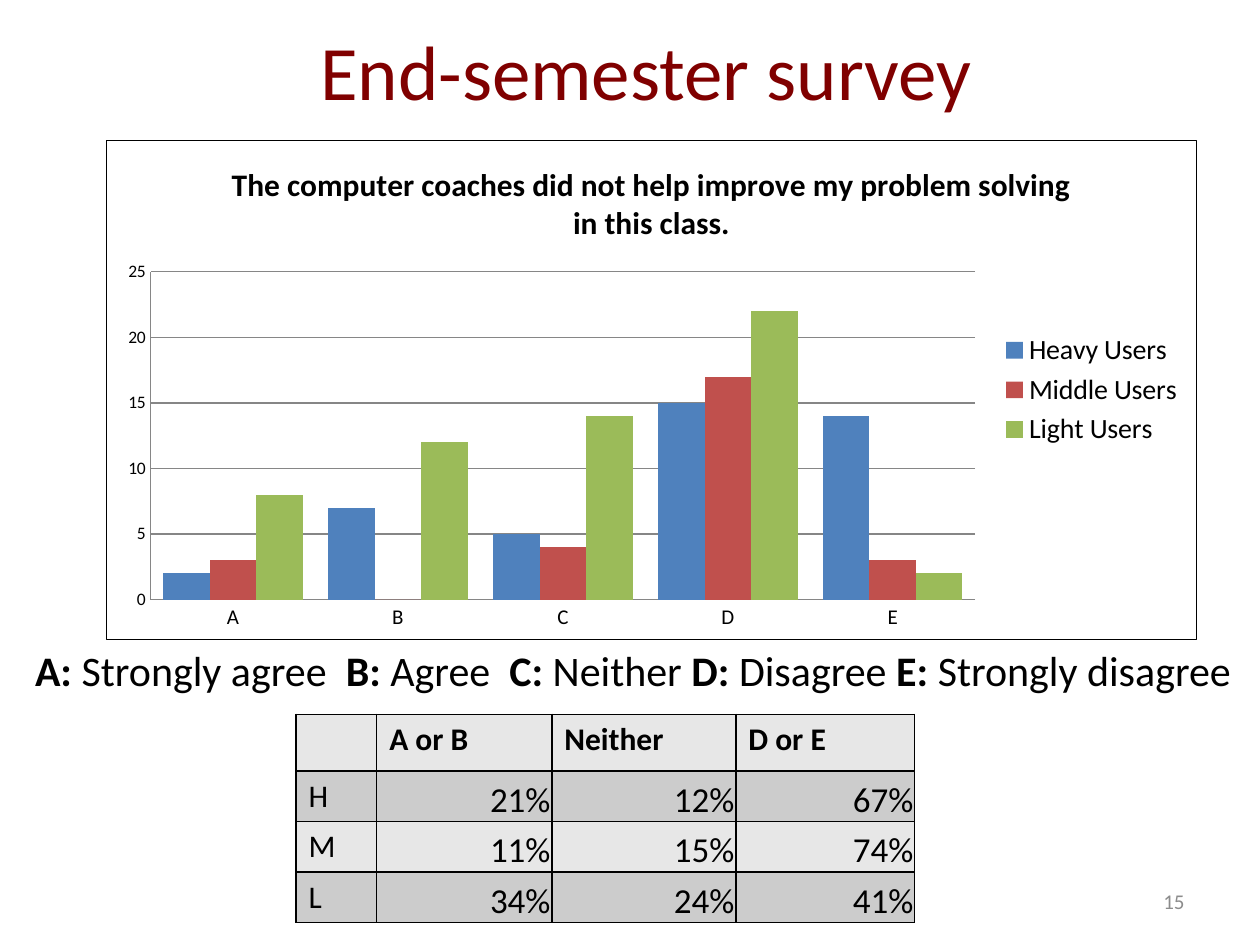
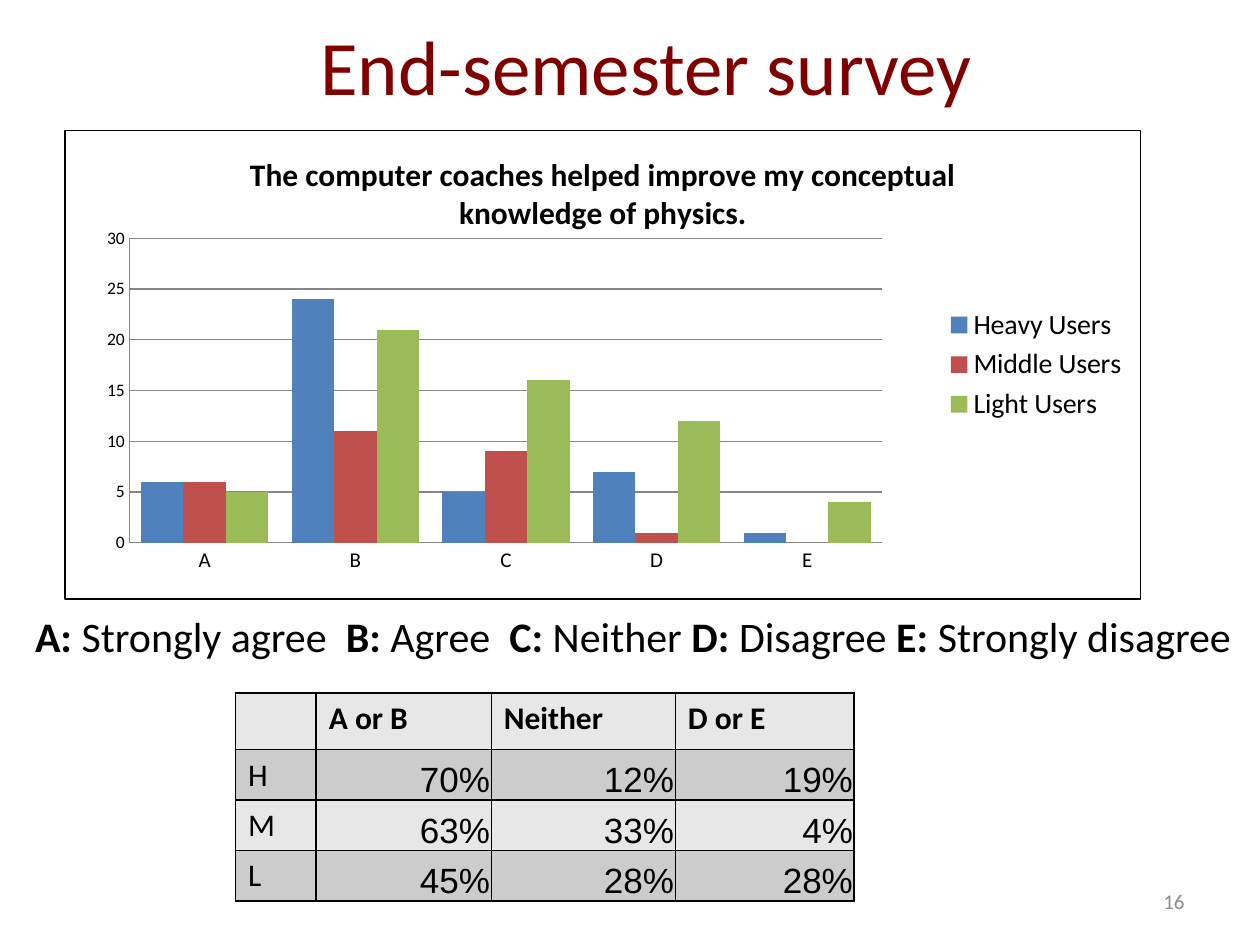
"""Build the two end-semester survey slides."""
import pptx
import pptx.chart.data
import pptx.dml.color
import pptx.enum.chart
import pptx.enum.text
import pptx.oxml
import pptx.oxml.ns
import pptx.util

CELL = pptx.util.Inches(0.1)
COLUMNS, ROWS = 100, 75
BODY_FONT = "Calibri"
BLACK, TITLE_RED, NUMBER_GREY, AXIS_GREY = "000000", "800000", "8C8C8C", "868686"
ROW_FILLS = ["E7E7E7", "CCCCCC"]
USER_COLORS = {"Heavy Users": "4F81BD", "Middle Users": "C0504D", "Light Users": "9BBB59"}
ANSWERS = ["A", "B", "C", "D", "E"]
SCALE = [("A: ", "Strongly agree  "), ("B:", " Agree  "), ("C: ", "Neither "),
         ("D:", " Disagree "), ("E:", " Strongly disagree")]
TABLE_HEADER = ["", "A or B", "Neither", "D or E"]
TABLE_COLUMNS = [6.4, 13.9, 14.6, 14.2]
TABLE_ROWS = [4.5, 4, 4, 4]
ALIGN = pptx.enum.text.PP_ALIGN
ANCHOR = pptx.enum.text.MSO_ANCHOR


def grid(*cells):
    """Turn grid cells into lengths."""
    return [round(CELL * count) for count in cells]


def rgb(color):
    """Turn a hex string into a colour."""
    return pptx.dml.color.RGBColor.from_string(color)


def style_font(font, size, color=BLACK, bold=False, face=BODY_FONT):
    """Set the look of a font."""
    font.name, font.size, font.bold = face, pptx.util.Pt(size), bold
    font.color.rgb = rgb(color)


def add_run(paragraph, text, *style, **options):
    """Append one styled run."""
    run = paragraph.add_run()
    run.text = text
    style_font(run.font, *style, **options)


def add_text_frame(slide, area, anchor, align, wrap=True):
    """Add a text box and return its first paragraph."""
    frame = slide.shapes.add_textbox(*grid(*area)).text_frame
    frame.word_wrap, frame.vertical_anchor = wrap, anchor
    paragraph = frame.paragraphs[0]
    paragraph.alignment = align
    return paragraph


def add_heading(slide, height):
    """Add the slide title."""
    heading = add_text_frame(slide, (5.1, 0, 92.4, height), ANCHOR.MIDDLE, ALIGN.CENTER)
    add_run(heading, "End-semester survey", 44, TITLE_RED)


def add_page_number(slide, number):
    """Add the page number at the lower right."""
    footer = add_text_frame(slide, (71.7, 69.5, 23.3, 4), ANCHOR.MIDDLE, ALIGN.RIGHT)
    add_run(footer, str(number), 12, NUMBER_GREY)


def add_scale(slide, top):
    """Add the line that explains the answer letters."""
    legend = add_text_frame(slide, (1.8, top, 98.2, 5), ANCHOR.TOP, ALIGN.LEFT, wrap=False)
    for letter, meaning in SCALE:
        add_run(legend, letter, 24, bold=True)
        add_run(legend, meaning, 24)


def line_xml(tag, width):
    """Return a solid black line element."""
    return pptx.oxml.parse_xml(
        f'<a:{tag} {pptx.oxml.ns.nsdecls("a")} w="{pptx.util.Pt(width)}"><a:solidFill>'
        f'<a:srgbClr val="{BLACK}"/></a:solidFill></a:{tag}>')


def frame_chart(chart):
    """Give the chart a white ground and a thin border."""
    frame = pptx.oxml.parse_xml(
        f'<c:spPr {pptx.oxml.ns.nsdecls("c", "a")}><a:solidFill>'
        '<a:srgbClr val="FFFFFF"/></a:solidFill></c:spPr>')
    frame.append(line_xml("ln", 0.75))
    chart.element.find(pptx.oxml.ns.qn("c:txPr")).addprevious(frame)


def place_plot(chart, shares):
    """Fix the inner plot area as shares of the chart."""
    plot_area = chart.element.find(".//" + pptx.oxml.ns.qn("c:plotArea"))
    for automatic in plot_area.findall(pptx.oxml.ns.qn("c:layout")):
        plot_area.remove(automatic)
    modes = '<c:layoutTarget val="inner"/><c:xMode val="edge"/><c:yMode val="edge"/>'
    sizes = "".join(f'<c:{tag} val="{share}"/>' for tag, share in zip("xywh", shares))
    plot_area.insert(0, pptx.oxml.parse_xml(
        f'<c:layout {pptx.oxml.ns.nsdecls("c")}><c:manualLayout>{modes}{sizes}'
        '</c:manualLayout></c:layout>'))


def add_answer_chart(slide, area, question, counts, plot_shares=None):
    """Add the clustered columns of answers by user group."""
    answers = pptx.chart.data.CategoryChartData()
    answers.categories = ANSWERS
    for group, values in zip(USER_COLORS, counts):
        answers.add_series(group, values)
    chart = slide.shapes.add_chart(
        pptx.enum.chart.XL_CHART_TYPE.COLUMN_CLUSTERED, *grid(*area), answers).chart
    style_font(chart.font, 10)
    frame_chart(chart)
    chart.has_title = True
    add_run(chart.chart_title.text_frame.paragraphs[0], question, 18, bold=True)
    chart.has_legend = True
    chart.legend.position = pptx.enum.chart.XL_LEGEND_POSITION.RIGHT
    chart.legend.include_in_layout = False
    style_font(chart.legend.font, 16)
    columns = chart.plots[0]
    columns.gap_width, columns.overlap, columns.vary_by_categories = 55, 0, False
    for series in columns.series:
        series.format.fill.solid()
        series.format.fill.fore_color.rgb = rgb(USER_COLORS[series.name])
    for axis, size in ((chart.category_axis, 12), (chart.value_axis, 10)):
        axis.major_tick_mark = pptx.enum.chart.XL_TICK_MARK.NONE
        axis.minor_tick_mark = pptx.enum.chart.XL_TICK_MARK.NONE
        axis.format.line.color.rgb = rgb(AXIS_GREY)
        style_font(axis.tick_labels.font, size)
    chart.value_axis.has_major_gridlines = True
    chart.value_axis.major_gridlines.format.line.color.rgb = rgb(AXIS_GREY)
    if plot_shares:
        place_plot(chart, plot_shares)


def fill_cell(cell, text, color, is_header, is_share, share_font):
    """Set the borders, fill and text of one table cell."""
    borders = cell._tc.get_or_add_tcPr()
    for side in ("lnL", "lnR", "lnT", "lnB"):
        borders.append(line_xml(side, 1))
    cell.fill.solid()
    cell.fill.fore_color.rgb = rgb(color)
    paragraph = cell.text_frame.paragraphs[0]
    if is_share:
        cell.margin_left, cell.margin_right, cell.margin_top, cell.margin_bottom = grid(
            0.1, 0.1, 0.1, 0)
        cell.vertical_anchor = ANCHOR.BOTTOM
        paragraph.alignment = ALIGN.RIGHT
        add_run(paragraph, text, 20, face=share_font)
    elif text:
        add_run(paragraph, text, 18, bold=is_header)


def add_share_table(slide, left, top, shares, share_font):
    """Add the table of answer shares by user group."""
    content = [TABLE_HEADER] + [[group] + row for group, row in zip("HML", shares)]
    area = grid(left, top, sum(TABLE_COLUMNS), sum(TABLE_ROWS))
    table = slide.shapes.add_table(len(TABLE_ROWS), len(TABLE_COLUMNS), *area).table
    table.first_row = table.horz_banding = False
    for column, width in zip(table.columns, grid(*TABLE_COLUMNS)):
        column.width = width
    for row, height in zip(table.rows, grid(*TABLE_ROWS)):
        row.height = height
    for r, texts in enumerate(content):
        for c, text in enumerate(texts):
            fill_cell(table.cell(r, c), text, ROW_FILLS[r % 2], r == 0, r > 0 and c > 0,
                      share_font)


def add_survey_slide(deck, number, heading_height, chart, scale_top, table):
    """Add one survey question with its chart, scale and table."""
    slide = deck.slides.add_slide(deck.slide_layouts[6])
    add_heading(slide, heading_height)
    add_page_number(slide, number)
    add_answer_chart(slide, *chart)
    add_scale(slide, scale_top)
    add_share_table(slide, *table)


def main():
    """Build and save the slides."""
    deck = pptx.Presentation()
    deck.slide_width, deck.slide_height = grid(COLUMNS, ROWS)
    add_survey_slide(
        deck, 15, 11.1,
        ((8.4, 11.1, 86.6, 39.7),
         "The computer coaches did not help improve my problem solving in this class.",
         [[2, 7, 5, 15, 14], [3, 0, 4, 17, 3], [8, 12, 14, 22, 2]]),
        50.7,
        (23.5, 56.7,
         [["21%", "12%", "67%"], ["11%", "15%", "74%"], ["34%", "24%", "41%"]], BODY_FONT))
    add_survey_slide(
        deck, 16, 10.3,
        ((5.1, 10.3, 85.5, 37.3),
         "The computer coaches helped improve my conceptual knowledge of physics.",
         [[6, 24, 5, 7, 1], [6, 11, 9, 1, 0], [5, 21, 16, 12, 4]],
         (0.06, 0.23, 0.7, 0.65)),
        48,
        (18.7, 55,
         [["70%", "12%", "19%"], ["63%", "33%", "4%"], ["45%", "28%", "28%"]], "Arial"))
    deck.save("out.pptx")


if __name__ == "__main__":
    main()
